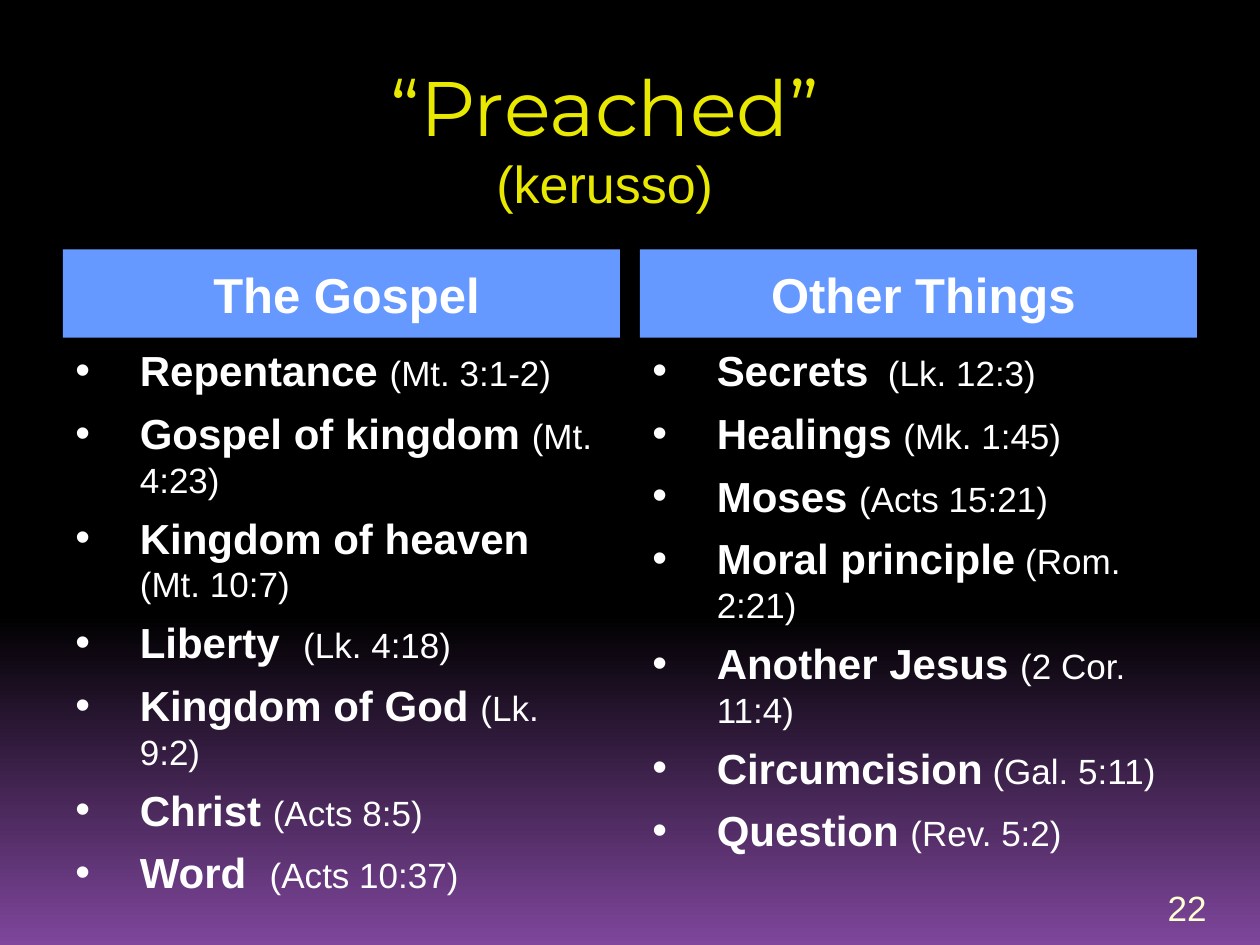
from dataclasses import dataclass
from typing import Any

from lxml import etree
from pptx import Presentation, util as u
from pptx.dml.color import RGBColor
from pptx.enum import shapes, text
from pptx.oxml.ns import qn


@dataclass(frozen=True)
class Theme:
    night: str = "000000"
    violet: str = "7F469C"
    band: str = "6699FF"
    title: str = "E8E800"
    body: str = "FFFFFF"
    number: str = "FFFFD2"
    title_font: str = "Montserrat"
    body_font: str = "Arial"
    title_size: float = 44.1
    subtitle_size: float = 29.7
    heading_size: float = 28
    topic_size: float = 24
    verse_size: float = 20
    gap: float = 7


@dataclass(frozen=True)
class Box:
    left: float
    top: float
    width: float
    height: float

    def lengths(self) -> list[u.Length]:
        return [u.Cm(n) for n in (self.left, self.top, self.width, self.height)]


@dataclass(frozen=True)
class Passage:
    topic: str
    verse: str


@dataclass(frozen=True)
class Column:
    heading: str
    passages: tuple[Passage, ...]


THEME = Theme()
MARGIN, COLUMN_WIDTH, COLUMN_STEP = 1.27, 11.23, 11.63
HEADING_TOP, HEADING_HEIGHT, LIST_HEIGHT = 5.03, 1.78, 11
LIST_TOP = 6.83
INDENT, HEADING_INDENT = 1.3, 0.2

COLUMNS = (
    Column("The Gospel", (
        Passage("Repentance ", "(Mt. 3:1-2)"),
        Passage("Gospel of kingdom ", "(Mt. 4:23)"),
        Passage("Kingdom of heaven  ", "(Mt. 10:7)"),
        Passage("Liberty  ", "(Lk. 4:18)"),
        Passage("Kingdom of God ", "(Lk. 9:2)"),
        Passage("Christ ", "(Acts 8:5)"),
        Passage("Word  ", "(Acts 10:37)"),
    )),
    Column("Other Things", (
        Passage("Secrets", "  (Lk. 12:3)"),
        Passage("Healings ", "(Mk. 1:45)"),
        Passage("Moses ", "(Acts 15:21)"),
        Passage("Moral principle", " (Rom. 2:21)"),
        Passage("Another Jesus ", "(2 Cor. 11:4)"),
        Passage("Circumcision", " (Gal. 5:11)"),
        Passage("Question ", "(Rev. 5:2)"),
    )),
)


def apply(target: Any, formats: dict[str, Any]) -> None:
    for name, value in formats.items():
        setattr(target, name, value)


def write(paragraph: Any, words: str, size: float, color: str,
          bold: bool = False, font: str = THEME.body_font) -> None:
    run = paragraph.add_run()
    run.text = words
    apply(run.font, {"size": u.Pt(size), "bold": bold, "name": font})
    run.font.color.rgb = RGBColor.from_string(color)


def text_frame(slide: Any, box: Box, anchor: Any = text.MSO_ANCHOR.TOP) -> Any:
    frame = slide.shapes.add_textbox(*box.lengths()).text_frame
    apply(frame, {"word_wrap": True, "vertical_anchor": anchor})
    return frame


def add_bullet(paragraph: Any) -> None:
    properties = paragraph._p.get_or_add_pPr()
    apply_indent = {"marL": u.Cm(INDENT), "indent": -u.Cm(INDENT)}
    for name, value in apply_indent.items():
        properties.set(name, str(int(value)))
    color = etree.SubElement(properties, qn("a:buClr"))
    etree.SubElement(color, qn("a:srgbClr"), val=THEME.body)
    etree.SubElement(properties, qn("a:buFont"), typeface=THEME.body_font)
    etree.SubElement(properties, qn("a:buChar"), char="•")


def paint_background(slide: Any) -> None:
    fill = slide.background.fill
    fill.gradient()
    fill.gradient_angle = 270
    fade = ((0.65, THEME.night), (1, THEME.violet))
    for stop, (position, color) in zip(fill.gradient_stops, fade):
        stop.position = position
        stop.color.rgb = RGBColor.from_string(color)


def draw_title(slide: Any) -> None:
    title = text_frame(slide, Box(1.4, 1.07, 21.59, 3.38)).paragraphs[0]
    title.alignment = text.PP_ALIGN.CENTER
    write(title, "“Preached”", THEME.title_size, THEME.title, font=THEME.title_font)
    title.add_line_break()
    write(title, "(kerusso)", THEME.subtitle_size, THEME.title)


def draw_heading(slide: Any, heading: str, box: Box) -> None:
    band = slide.shapes.add_shape(shapes.MSO_SHAPE.RECTANGLE, *box.lengths())
    band.shadow.inherit = False
    band.fill.solid()
    band.fill.fore_color.rgb = RGBColor.from_string(THEME.band)
    band.line.fill.background()
    apply(band.text_frame, {"word_wrap": True, "vertical_anchor": text.MSO_ANCHOR.MIDDLE})
    label = band.text_frame.paragraphs[0]
    apply(label, {"alignment": text.PP_ALIGN.CENTER, "space_before": u.Pt(THEME.gap)})
    label._p.get_or_add_pPr().set("marL", str(int(u.Cm(HEADING_INDENT))))
    write(label, heading, THEME.heading_size, THEME.body, bold=True)


def draw_passages(slide: Any, passages: tuple[Passage, ...], box: Box) -> None:
    frame = text_frame(slide, box)
    for index, passage in enumerate(passages):
        entry = frame.add_paragraph() if index else frame.paragraphs[0]
        entry.space_before = u.Pt(THEME.gap)
        add_bullet(entry)
        write(entry, passage.topic, THEME.topic_size, THEME.body, bold=True)
        write(entry, passage.verse, THEME.verse_size, THEME.body)


def draw_page_number(slide: Any) -> None:
    frame = text_frame(slide, Box(23.29, 17.83, 1.7, 1.02), text.MSO_ANCHOR.BOTTOM)
    write(frame.paragraphs[0], "22", THEME.verse_size, THEME.number)


def main() -> None:
    deck = Presentation()
    apply(deck, {"slide_width": u.Cm(25.4), "slide_height": u.Cm(19.05)})
    slide = deck.slides.add_slide(deck.slide_layouts[6])
    paint_background(slide)
    draw_title(slide)
    for index, column in enumerate(COLUMNS):
        left = MARGIN + index * COLUMN_STEP
        draw_heading(slide, column.heading,
                     Box(left, HEADING_TOP, COLUMN_WIDTH, HEADING_HEIGHT))
        draw_passages(slide, column.passages,
                      Box(left, LIST_TOP, COLUMN_WIDTH, LIST_HEIGHT))
    draw_page_number(slide)
    deck.save("out.pptx")


if __name__ == "__main__":
    main()
